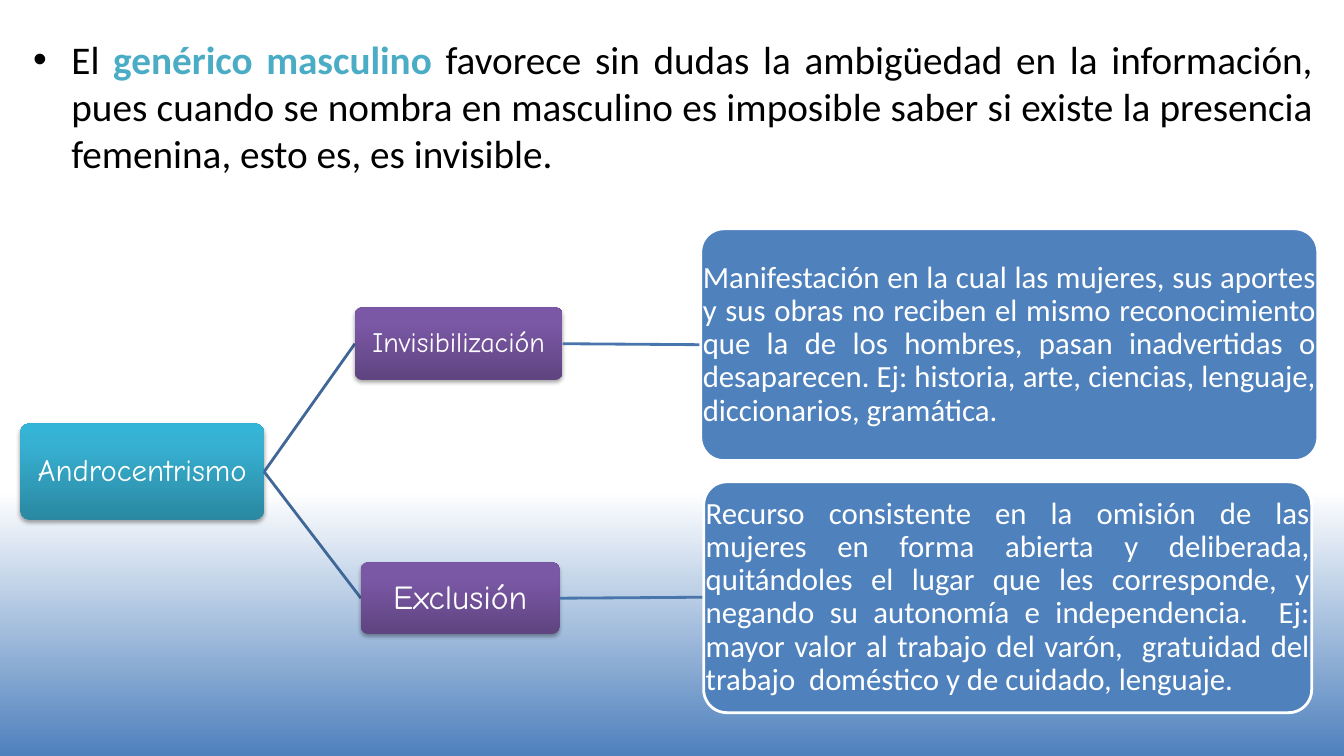
from lxml.etree import SubElement
from pptx import Presentation
from pptx.dml.color import RGBColor
from pptx.enum.shapes import MSO_CONNECTOR, MSO_SHAPE
from pptx.enum.text import MSO_ANCHOR, PP_ALIGN
from pptx.oxml.ns import qn
from pptx.util import Inches, Pt

WHITE, BLACK, BLUE, AQUA = "FFFFFF", "000000", "4F81BD", "4BACC6"
PURPLE_STOPS = [(0, "5F4480"), (80, "7B58A6"), (100, "7C57A8")]
AQUA_STOPS = [(0, "2A88A2"), (80, "37B1D2"), (100, "34B4D6")]
PAGE_STOPS = [(0, WHITE), (65, WHITE), (100, BLUE)]

INTRO = [
    ("El ", BLACK, False),
    ("genérico masculino ", AQUA, True),
    ("favorece sin dudas la ambigüedad en la información, pues cuando se nombra "
     "en masculino es imposible saber si existe la presencia femenina, esto es, "
     "es invisible. ", BLACK, False),
]
ROOT = ("Androcentrismo", 22, (0.2, 4.2, 2.42, 0.96))
BRANCHES = [
    (("Invisibilización", 20, (3.52, 3.05, 2.06, 0.72)),
     ("Manifestación en la cual las mujeres, sus aportes y sus obras no reciben el "
      "mismo reconocimiento que la de los hombres, pasan inadvertidas o desaparecen. "
      "Ej: historia, arte, ciencias, lenguaje, diccionarios, gramática.  ",
      (6.95, 2.27, 6.12, 2.3))),
    (("Exclusión", 24, (3.58, 5.58, 1.97, 0.71)),
     ("Recurso consistente en la omisión de las mujeres en forma abierta y "
      "deliberada, quitándoles el lugar que les corresponde, y negando su autonomía "
      "e independencia.  Ej: mayor valor al trabajo del varón,  gratuidad del "
      "trabajo  doméstico y de cuidado, lenguaje.  ",
      (6.98, 4.78, 6.03, 2.29))),
]


def color(value):
    return RGBColor.from_string(value)


def inches(box):
    return [Inches(length) for length in box]


def set_gradient(fill, owner, stops, angle):
    """Fill with the (percent, colour) stops; owner is the element holding the fill."""
    fill.gradient()
    fill.gradient_angle = angle
    stop_list = next(owner.iter(qn("a:gsLst")))
    for stop in list(stop_list):
        stop_list.remove(stop)
    for percent, value in stops:
        stop = SubElement(stop_list, qn("a:gs"), pos=str(percent * 1000))
        SubElement(stop, qn("a:srgbClr"), val=value)


def add_shadow(shape):
    effects = shape._element.spPr.find(qn("a:effectLst"))
    shadow = SubElement(effects, qn("a:outerShdw"), blurRad=str(Pt(3.1)),
                        dist=str(Pt(1.8)), dir="5400000", rotWithShape="0")
    tint = SubElement(shadow, qn("a:srgbClr"), val=BLACK)
    SubElement(tint, qn("a:alpha"), val="35000")


def add_run(paragraph, text, size, font, value, bold=False):
    run = paragraph.add_run()
    run.text = text
    run.font.color.rgb = color(value)
    for key, setting in {"size": Pt(size), "name": font, "bold": bold}.items():
        setattr(run.font, key, setting)


def write_label(shape, text, size, font, align):
    frame = shape.text_frame
    margins = dict.fromkeys(
        ("margin_left", "margin_top", "margin_right", "margin_bottom"), Inches(0.02))
    layout = {"word_wrap": True, "vertical_anchor": MSO_ANCHOR.MIDDLE, **margins}
    for key, setting in layout.items():
        setattr(frame, key, setting)
    paragraph = frame.paragraphs[0]
    paragraph.alignment = align
    paragraph.line_spacing = 0.9
    add_run(paragraph, text, size, font, WHITE)


def add_rounded(slide, box):
    shape = slide.shapes.add_shape(MSO_SHAPE.ROUNDED_RECTANGLE, *inches(box))
    shape.adjustments[0] = 0.1
    shape.shadow.inherit = False
    return shape


def add_intro(slide, box):
    frame = slide.shapes.add_textbox(*inches(box)).text_frame
    frame.word_wrap = True
    paragraph = frame.paragraphs[0]
    paragraph.alignment = PP_ALIGN.JUSTIFY
    paragraph.space_before = Pt(5.6)
    props = paragraph._p.get_or_add_pPr()
    props.set("marL", str(Inches(0.38)))
    props.set("indent", str(-Inches(0.38)))
    SubElement(props, qn("a:buFont"), typeface="Arial")
    SubElement(props, qn("a:buChar"), char="•")
    for text, value, bold in INTRO:
        add_run(paragraph, text, 28, "Calibri", value, bold)


def add_node(slide, text, size, box, stops):
    node = add_rounded(slide, box)
    set_gradient(node.fill, node._element.spPr, stops, 90)
    node.line.fill.background()
    add_shadow(node)
    write_label(node, text, size, "Comic Neue", PP_ALIGN.CENTER)


def add_detail(slide, text, box):
    """Panel whose text runs the full width, past the inset of the round corners."""
    panel = add_rounded(slide, box)
    panel.fill.solid()
    panel.fill.fore_color.rgb = color(BLUE)
    panel.line.color.rgb = color(WHITE)
    panel.line.width = Pt(2)
    label = slide.shapes.add_textbox(*inches(box))
    write_label(label, text, 22, "Calibri", PP_ALIGN.JUSTIFY)


def add_link(slide, source, target, value):
    """Line from the middle of the right side of source to the left side of target."""
    start = (source[0] + source[2], source[1] + source[3] / 2)
    end = (target[0], target[1] + target[3] / 2)
    link = slide.shapes.add_connector(MSO_CONNECTOR.STRAIGHT, *inches(start + end))
    link.line.color.rgb = color(value)
    link.line.width = Pt(2)
    SubElement(link._element.spPr, qn("a:effectLst"))


def add_tree(slide):
    root_box = ROOT[-1]
    add_node(slide, *ROOT, AQUA_STOPS)
    for node, detail in BRANCHES:
        add_link(slide, root_box, node[-1], "3F6797")
        add_node(slide, *node, PURPLE_STOPS)
        add_link(slide, node[-1], detail[-1], "4875AC")
        add_detail(slide, *detail)


def main():
    deck = Presentation()
    deck.slide_width, deck.slide_height = Inches(13.33), Inches(7.5)
    slide = deck.slides.add_slide(deck.slide_layouts[6])
    set_gradient(slide.background.fill, slide._element, PAGE_STOPS, 270)
    add_intro(slide, (0.23, 0.3, 12.89, 1.6))
    add_tree(slide)
    deck.save("out.pptx")


if __name__ == "__main__":
    main()
